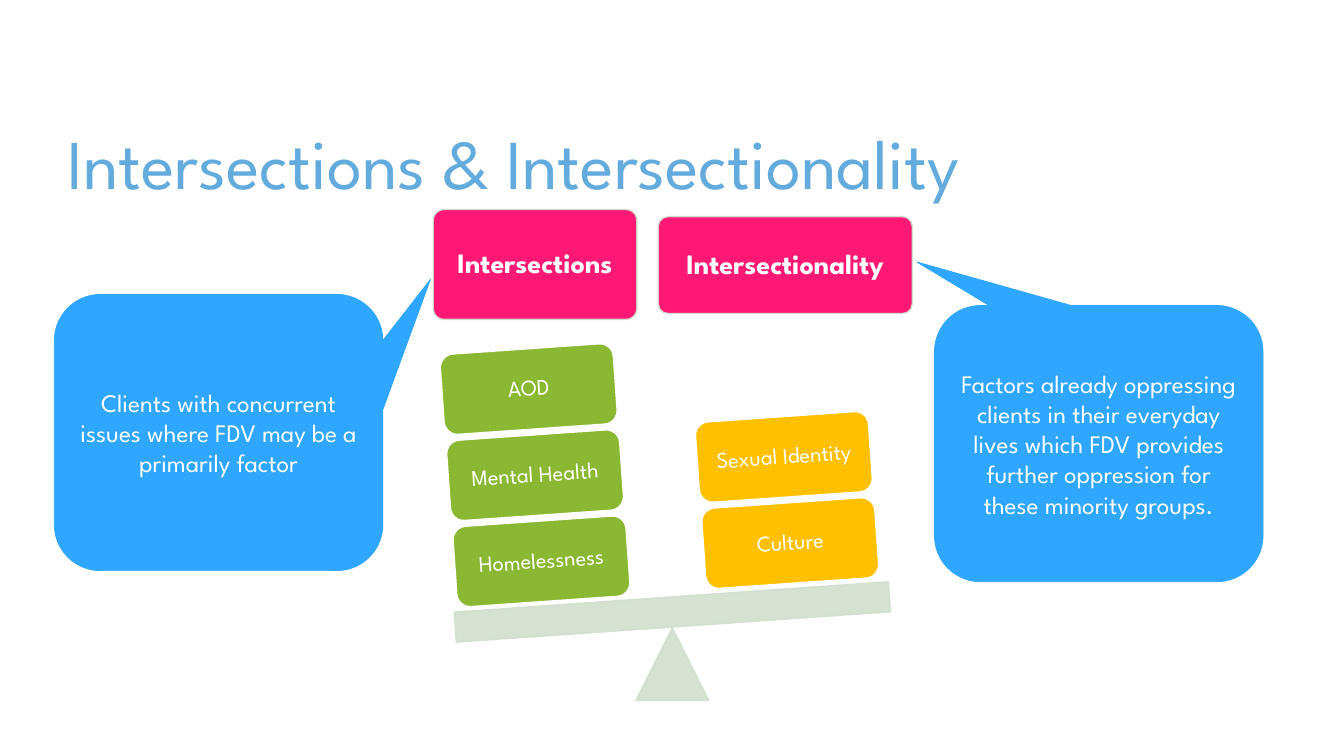
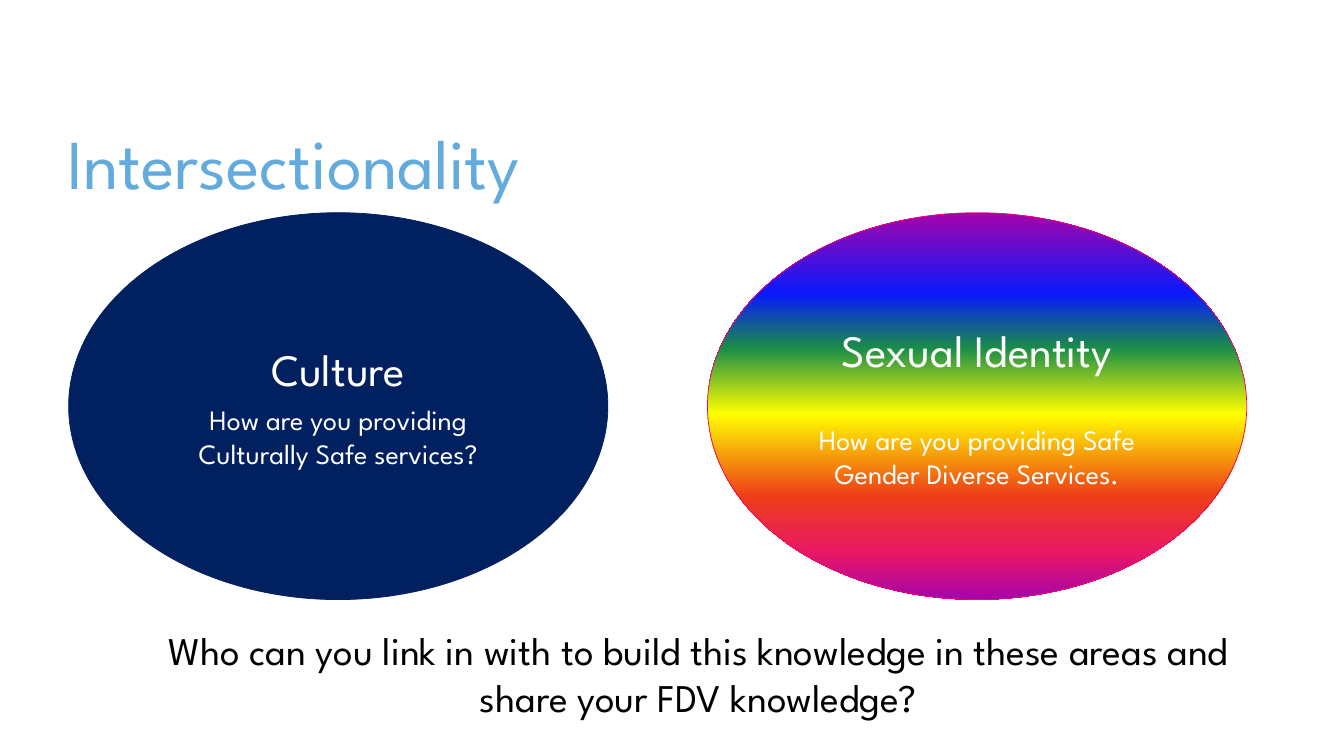
from lxml.etree import SubElement
from pptx import Presentation
from pptx.dml.color import RGBColor
from pptx.enum.shapes import MSO_SHAPE as Kind
from pptx.enum.text import MSO_ANCHOR as Anchor, MSO_AUTO_SIZE as Auto, PP_ALIGN as Align
from pptx.oxml.ns import qn
from pptx.util import Cm, Pt

COLORS = {
    "title": "63AADD", "head": "FF0066", "scale": "D1DFCE", "issue": "8AB833",
    "factor": "FFC000", "call": "2FA6FF", "navy": "002060", "white": "FFFFFF",
    "black": "000000",
}
RAINBOW = [(0, "A603AB"), (21, "0819FB"), (35, "1A8D48"), (52, "FFFF00"),
           (73, "EE3F17"), (88, "E81766"), (100, "A603AB")]
FONT = "League Spartan"
TITLE_BOX = (1.7, 1.96, 30.48, 3.18)
TITLE_FRAME = {"margin_left": 0, "margin_top": Cm(0.13), "margin_right": 0,
               "margin_bottom": 0, "vertical_anchor": Anchor.BOTTOM,
               "auto_size": Auto.NONE}

# Slide 1
TILT = -4
HEADS = [("Intersections", (10.92, 5.28, 5.13, 2.77)),
         ("Intersectionality", (16.59, 5.46, 6.4, 2.44))]
SCALE = [(Kind.ISOSCELES_TRIANGLE, (16.03, 15.82, 1.83, 1.83), 0),
         (Kind.RECTANGLE, (11.46, 15.04, 10.97, 0.76), TILT)]
TILE = (4.37, 2.03)
STEP = (-0.16, -2.17)
STACKS = [  # colour, place of the lowest tile, labels from the bottom up
    ("issue", (11.46, 13.13), ["Homelessness", "Mental Health", "AOD"]),
    ("factor", (17.73, 12.67), ["Culture", "Sexual Identity"]),
]
CALLS = [
    ("Clients with concurrent issues where FDV may be a primarily factor",
     (1.37, 7.42), (0.645, -0.555)),
    ("Factors already oppressing clients in their everyday lives which FDV "
     "provides further oppression for these minority groups.",
     (23.55, 7.7), (-0.554, -0.658)),
]
CALL = (8.28, 6.96)

# Slide 2
OVALS = [  # heading, question, gap between them in points, left, line colour
    ("Culture", "How are you providing Culturally Safe services?", 5, 1.73, "navy"),
    ("Sexual Identity", "How are you providing Safe Gender Diverse Services.",
     33, 17.83, "head"),
]
OVAL_TOP, OVAL = 5.36, (13.59, 9.75)
ASK = "Who can you link in with to build this knowledge in these areas and share your FDV knowledge?"
ASK_BOX = (3.78, 15.65, 27.64, 3.4)


def rgb(name):
    return RGBColor.from_string(COLORS[name])


def fit(item, values):
    """Set every attribute named in values on item."""
    for key, value in values.items():
        setattr(item, key, value)


def write(frame, lines, color, align=Align.CENTER, **style):
    """Fill a frame with lines of (text, size, space before)."""
    for i, (text, size, gap) in enumerate(lines):
        para = frame.add_paragraph() if i else frame.paragraphs[0]
        fit(para, {"alignment": align, **style})
        if gap:
            para.space_before = Pt(gap)
        run = para.add_run()
        run.text = text
        fit(run.font, {"name": FONT, "size": Pt(size), "bold": False})
        run.font.color.rgb = rgb(color)


def draw(slide, kind, box, fill, line=None, width=0.5, alpha=None, adj=(), turn=0):
    shape = slide.shapes.add_shape(kind, *map(Cm, box))
    shape.shadow.inherit = False
    shape.rotation = turn
    shape.fill.solid()
    shape.fill.fore_color.rgb = rgb(fill)
    shape.line.color.rgb = rgb(line or fill)
    shape.line.width = Pt(width)
    for i, value in enumerate(adj):
        shape.adjustments[i] = value
    if alpha:
        for tint in shape._element.spPr.iter(qn("a:srgbClr")):
            SubElement(tint, qn("a:alpha"), val=str(alpha * 1000))
    fit(shape.text_frame, {"word_wrap": True, "vertical_anchor": Anchor.MIDDLE})
    return shape


def label(shape, text, size, pad):
    """Write one tight line in a tile or heading."""
    frame = shape.text_frame
    sides = ("left", "top", "right", "bottom")
    fit(frame, {f"margin_{side}": Cm(pad) for side in sides})
    write(frame, [(text, size, 0)], "white", line_spacing=0.9)


def blend(shape, stops):
    """Fill a shape from top to bottom with colour stops."""
    shape.fill.gradient()
    shape.fill.gradient_angle = 270
    rows = shape._element.spPr.find(".//" + qn("a:gsLst"))
    rows.clear()
    for place, tint in stops:
        stop = SubElement(rows, qn("a:gs"), pos=str(place * 1000))
        SubElement(stop, qn("a:srgbClr"), val=tint)


def add_slide(deck, layout, title):
    slide = deck.slides.add_slide(layout)
    write(slide.shapes.title.text_frame, [(title, 50, 0)], "title", Align.LEFT)
    return slide


def add_scale(slide):
    for text, box in HEADS:
        head = draw(slide, Kind.ROUNDED_RECTANGLE, box, "head", "scale", 1, 90, [0.1])
        label(head, text, 20, 0.2)
        head.text_frame.paragraphs[0].runs[0].font.bold = True
    for kind, box, turn in SCALE:
        draw(slide, kind, box, "scale", width=1, alpha=90, turn=turn)
    for color, (left, top), names in STACKS:
        for i, name in enumerate(names):
            box = (left + i * STEP[0], top + i * STEP[1], *TILE)
            tile = draw(slide, Kind.ROUNDED_RECTANGLE, box, color, "white", 1, turn=TILT)
            label(tile, name, 16, 0.1)
    for text, place, tip in CALLS:
        call = draw(slide, Kind.ROUNDED_RECTANGULAR_CALLOUT, (*place, *CALL), "call",
                    adj=(*tip, 0.167))
        write(call.text_frame, [(text, 18, 0)], "white")


def add_ovals(slide):
    for head, text, gap, left, color in OVALS:
        oval = draw(slide, Kind.OVAL, (left, OVAL_TOP, *OVAL), color)
        if color == "head":
            blend(oval, RAINBOW)
        write(oval.text_frame, [(head, 32, 0), (text, 20, gap)], "white")
    frame = slide.shapes.add_textbox(*map(Cm, ASK_BOX)).text_frame
    frame.word_wrap = True
    write(frame, [(ASK, 28, 0)], "black")


def main():
    deck = Presentation()
    fit(deck, {"slide_width": Cm(33.87), "slide_height": Cm(19.05)})
    layout = deck.slide_layouts.get_by_name("Title Only")
    title = layout.placeholders[0]
    fit(title, dict(zip(("left", "top", "width", "height"), map(Cm, TITLE_BOX))))
    fit(title.text_frame, TITLE_FRAME)
    add_scale(add_slide(deck, layout, "Intersections & Intersectionality"))
    add_ovals(add_slide(deck, layout, "Intersectionality"))
    deck.save("out.pptx")


if __name__ == "__main__":
    main()
